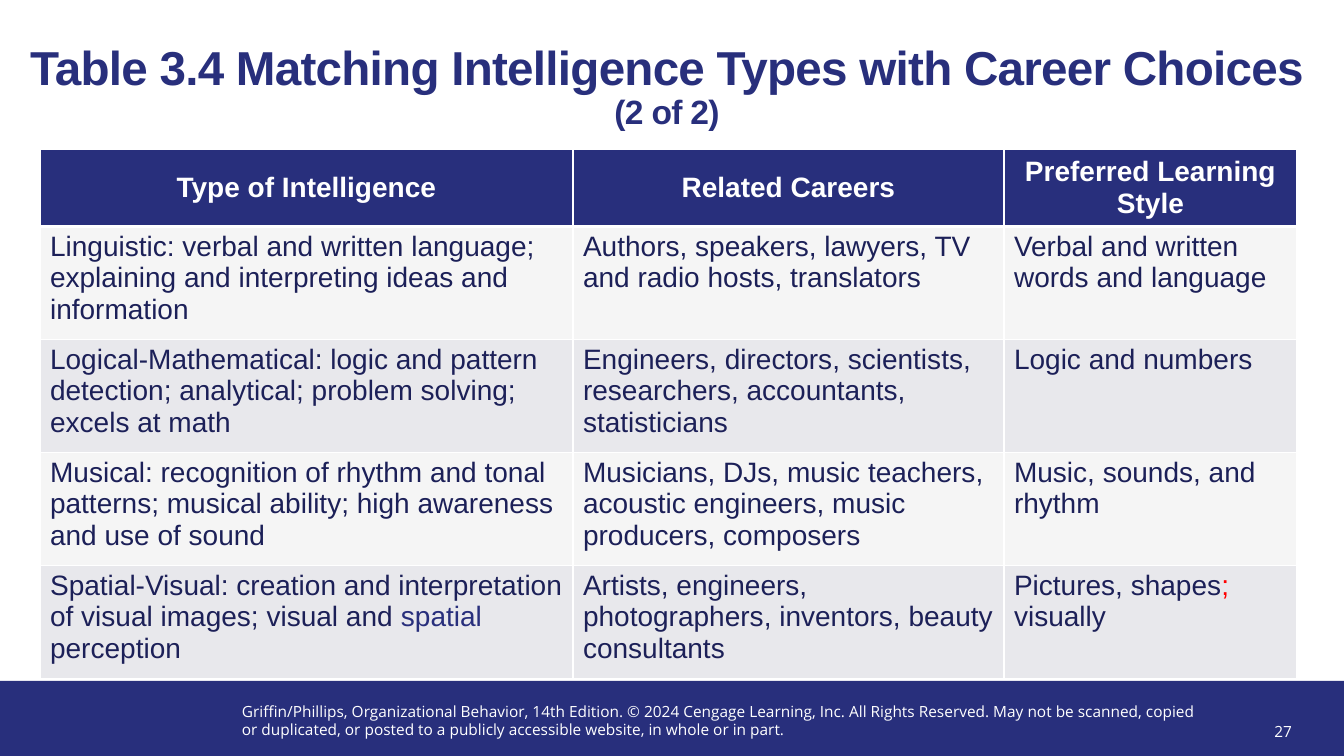
from dataclasses import dataclass

from lxml import etree
from pptx import Presentation
from pptx.dml.color import RGBColor
from pptx.enum.shapes import MSO_SHAPE
from pptx.enum.text import MSO_ANCHOR, PP_ALIGN
from pptx.oxml.ns import qn
from pptx.util import Emu, Pt

RECT = MSO_SHAPE.RECTANGLE
TOP, MIDDLE, BOTTOM = MSO_ANCHOR.TOP, MSO_ANCHOR.MIDDLE, MSO_ANCHOR.BOTTOM
LEFT, CENTER, RIGHT = PP_ALIGN.LEFT, PP_ALIGN.CENTER, PP_ALIGN.RIGHT
SCALE = 914400 / 100.8


@dataclass(frozen=True)
class Theme:
    navy: str = "282F7C"
    ink: str = "1C2058"
    red: str = "FF0000"
    white: str = "FFFFFF"
    bands: tuple = ("F5F5F5", "E8E8EC")
    face: str = "Arial"
    small_face: str = "Open Sans"
    title: int = 34
    count: int = 24
    body: int = 20
    small: int = 11


def px(n):
    return Emu(round(n * SCALE))


def style(font, size, color, face, bold=False):
    font.size, font.name, font.bold = Pt(size), face, bold
    font.color.rgb = RGBColor.from_string(color)


def paint(fill, color):
    fill.solid()
    fill.fore_color.rgb = RGBColor.from_string(color)


class Builder:
    def __init__(self, slide, theme):
        self.slide, self.theme = slide, theme

    def bar(self, x, y, w, h):
        bar = self.slide.shapes.add_shape(RECT, px(x), px(y), px(w), px(h))
        bar.shadow.inherit = False
        paint(bar.fill, self.theme.navy)
        bar.line.fill.background()

    def note(self, text, x, y, w, h, align=LEFT, anchor=TOP):
        box = self.slide.shapes.add_textbox(px(x), px(y), px(w), px(h))
        frame = box.text_frame
        frame.word_wrap, frame.vertical_anchor = True, anchor
        para = frame.paragraphs[0]
        para.text, para.alignment = text, align
        style(para.font, self.theme.small, self.theme.white, self.theme.small_face)

    def title(self, main, count, x, y, w, h):
        t = self.theme
        head = self.slide.shapes.title
        head.left, head.top, head.width, head.height = map(px, (x, y, w, h))
        frame = head.text_frame
        frame.word_wrap, frame.vertical_anchor = True, BOTTOM
        para = frame.paragraphs[0]
        para.alignment, para.line_spacing = CENTER, 0.9
        for text, size in ((main, t.title), (count, t.count)):
            if para.runs:
                para.add_line_break()
            run = para.add_run()
            run.text = text
            style(run.font, size, t.navy, t.face, True)
            run.font._element.set("spc", "-50")

    def border(self, cell, base):
        props = cell._tc.get_or_add_tcPr()
        for i, (side, width) in enumerate((("L", 1), ("R", 1), ("T", 1), ("B", base))):
            line = etree.Element(qn(f"a:ln{side}"), w=str(Pt(width)))
            fill = etree.SubElement(line, qn("a:solidFill"))
            etree.SubElement(fill, qn("a:srgbClr"), val=self.theme.white)
            props.insert(i, line)

    def cell(self, cell, words, row):
        t, head = self.theme, row == 0
        paint(cell.fill, t.navy if head else t.bands[(row - 1) % 2])
        self.border(cell, 3 if head else 1)
        cell.vertical_anchor = MIDDLE if head else TOP
        para = cell.text_frame.paragraphs[0]
        para.alignment = CENTER if head else LEFT
        style(para.font, t.body, t.white if head else t.ink, t.face, head)
        # A plain string is one run; a tuple pairs text with its colour
        for text, color in [(words, None)] if isinstance(words, str) else words:
            run = para.add_run()
            run.text = text
            if color:
                run.font.color.rgb = RGBColor.from_string(color)

    def table(self, rows, x, y, widths, heights):
        frame = self.slide.shapes.add_table(
            len(rows), len(widths), px(x), px(y), px(sum(widths)), px(sum(heights)))
        grid = frame.table
        for col, width in zip(grid.columns, widths):
            col.width = px(width)
        for r, (row, height) in enumerate(zip(rows, heights)):
            grid.rows[r].height = px(height)
            for c, words in enumerate(row):
                self.cell(grid.cell(r, c), words, r)


def main():
    theme = Theme()
    deck = Presentation()
    deck.slide_width, deck.slide_height = px(1344), px(756)
    page = Builder(deck.slides.add_slide(deck.slide_layouts[5]), theme)

    # Footer
    page.bar(0, 681, 1344, 75)
    page.note("Griffin/Phillips, Organizational Behavior, 14th Edition. © 2024 Cengage "
              "Learning, Inc. All Rights Reserved. May not be scanned, copied or "
              "duplicated, or posted to a publicly accessible website, in whole or in part.",
              232, 697, 988, 47)
    page.note("27", 1222, 711, 80, 40, RIGHT, MIDDLE)

    # Title
    page.title("Table 3.4 Matching Intelligence Types with Career Choices", "(2 of 2)",
               8, 40, 1318, 97)

    # Intelligence types and careers
    rows = [
        ("Type of Intelligence", "Related Careers", "Preferred Learning Style"),
        ("Linguistic: verbal and written language; explaining and interpreting ideas "
         "and information",
         "Authors, speakers, lawyers, TV and radio hosts, translators",
         "Verbal and written words and language"),
        ("Logical-Mathematical: logic and pattern detection; analytical; problem "
         "solving; excels at math",
         "Engineers, directors, scientists, researchers, accountants, statisticians",
         "Logic and numbers"),
        ("Musical: recognition of rhythm and tonal patterns; musical ability; high "
         "awareness and use of sound",
         "Musicians, DJs, music teachers, acoustic engineers, music producers, composers",
         "Music, sounds, and rhythm"),
        ((("Spatial-Visual: creation and interpretation of visual images; visual and ", None),
          ("spatial", theme.navy), (" perception", None)),
         "Artists, engineers, photographers, inventors, beauty consultants",
         (("Pictures, shapes", None), (";", theme.red), (" visually", None))),
    ]
    page.table(rows, 40, 149, (533, 431, 293), (66,) + (113,) * 4)

    deck.save("out.pptx")


if __name__ == "__main__":
    main()
